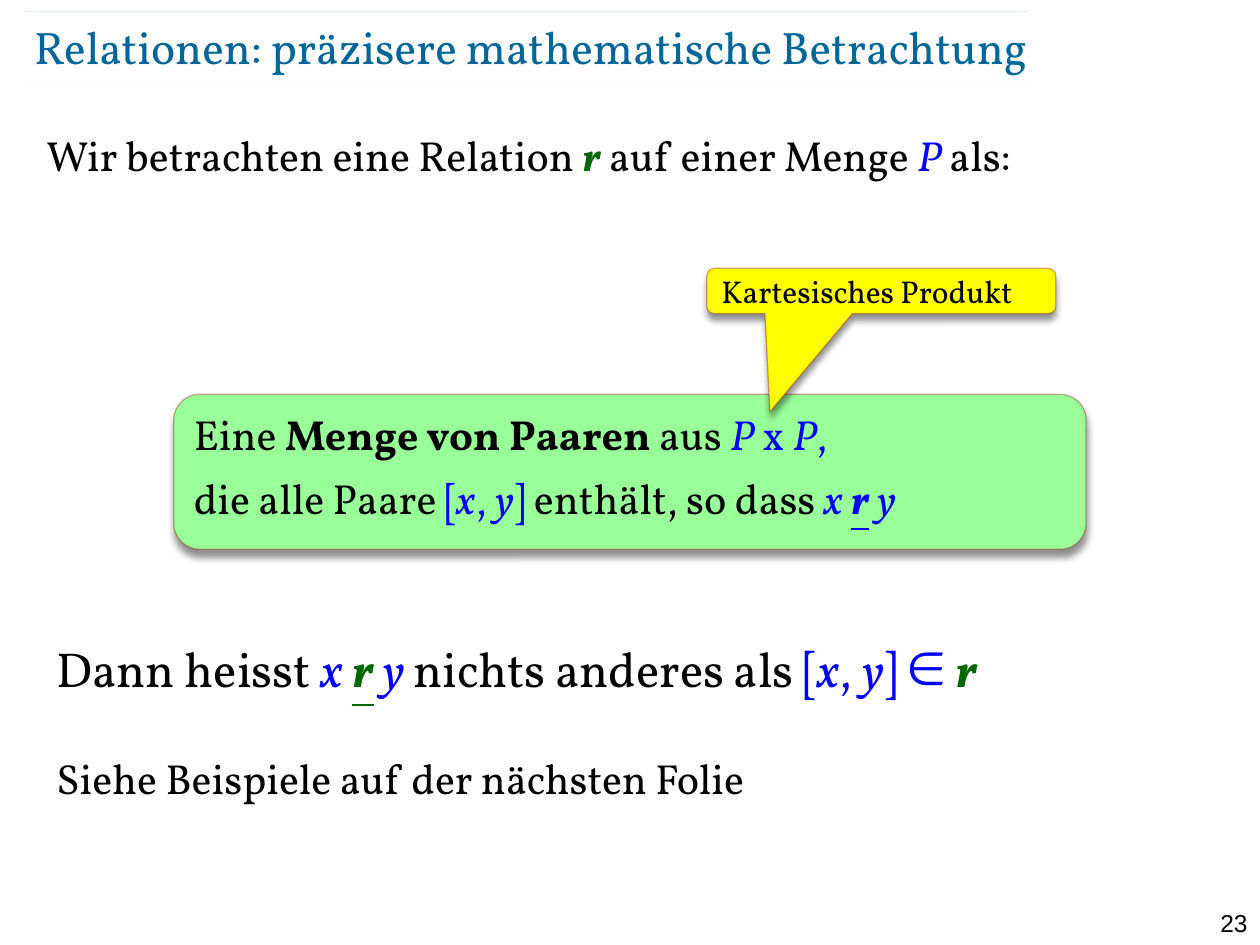
from lxml import etree
from pptx import Presentation
from pptx.dml.color import RGBColor
from pptx.enum import shapes, text
from pptx.oxml import parse_xml
from pptx.oxml.ns import qn
from pptx.util import Inches, Pt

HUE = {"title": "006699", "k": "000000", "g": "006600", "b": "0000FF",
       "box": "99FF99", "note": "FFFF00", "edge": "990000"}
FONT = "Vollkorn"
NS = "http://schemas.openxmlformats.org/drawingml/2006/main"

deck = Presentation()
deck.slide_width, deck.slide_height = Inches(10), Inches(7.5)
slide = deck.slides.add_slide(deck.slide_layouts[5])


def write(par, size, runs):
    """Each run is (words, style): a colour key, then B, I or U."""
    par.font.size, par.font.name = Pt(size), FONT
    par.alignment = text.PP_ALIGN.LEFT
    for words, style in runs:
        run = par.add_run()
        run.text = words
        run.font.color.rgb = RGBColor.from_string(HUE[style[0]])
        run.font.bold = "B" in style
        run.font.italic = "I" in style
        run.font.underline = "U" in style


def fade(line, share):
    """Make the colour of a line partly transparent."""
    color = line._ln.find(".//" + qn("a:srgbClr"))
    etree.SubElement(color, qn("a:alpha"), val=str(share * 1000))


# Rules above and below the title
for left, top in ((0.18, 0.67), (0.2, 0.09)):
    rule = slide.shapes.add_connector(
        shapes.MSO_CONNECTOR.STRAIGHT, Inches(left), Inches(top),
        Inches(left + 7.97), Inches(top))
    rule.line.color.rgb = RGBColor.from_string(HUE["title"])
    rule.line.width = Pt(0.1)
    fade(rule.line, 35)
    etree.SubElement(rule._element.spPr, qn("a:effectLst"))

# Title
title = slide.shapes.title
title.left, title.top = Inches(0.27), Inches(0.13)
title.width, title.height = Inches(8.69), Inches(0.48)
frame = title.text_frame
frame.auto_size = text.MSO_AUTO_SIZE.NONE
frame.vertical_anchor = text.MSO_ANCHOR.MIDDLE
frame.margin_left = frame.margin_right = 0
frame.margin_top = frame.margin_bottom = 0
write(frame.paragraphs[0], 26,
      [("Relationen: präzisere mathematische Betrachtung", ("title"),)][:0])
run = frame.paragraphs[0].add_run()
run.text = "Relationen: präzisere mathematische Betrachtung"
run.font.color.rgb = RGBColor.from_string(HUE["title"])

# Opening sentence
intro = slide.shapes.add_textbox(
    Inches(0.27), Inches(0.98), Inches(9.4), Inches(0.6)).text_frame
intro.word_wrap = True
write(intro.paragraphs[0], 24, [
    ("Wir betrachten eine Relation ", "k"), ("r", "gBI"),
    (" auf einer Menge ", "k"), ("P", "bI"), (" als:", "k")])

# Conclusion
end = slide.shapes.add_textbox(
    Inches(0.35), Inches(5.09), Inches(8.84), Inches(1.7)).text_frame
end.word_wrap = True
first = end.paragraphs[0]
first.line_spacing = 0.6
write(first, 28, [
    ("Dann heisst ", "k"), ("x ", "bI"), ("r", "gBIU"), (" y ", "bI"),
    ("nichts anderes als ", "k"), ("[", "b"), ("x", "bI"), (", ", "b"),
    ("y", "bI"), ("] ", "b"), ("∈", "b"), (" ", "b"), ("r", "gBI")])
first.runs[10].font.size = Pt(40)
last = end.add_paragraph()
last.space_before = Pt(31)
write(last, 24, [("Siehe Beispiele auf der nächsten Folie", "k")])

# Definition box and callout
frames = []
for kind, fill, left, top, width, height in (
        (shapes.MSO_SHAPE.ROUNDED_RECTANGLE, "box", 1.38, 3.13, 7.24, 1.23),
        (shapes.MSO_SHAPE.ROUNDED_RECTANGULAR_CALLOUT, "note",
         5.61, 2.13, 2.77, 0.36)):
    shape = slide.shapes.add_shape(
        kind, Inches(left), Inches(top), Inches(width), Inches(height))
    shape.fill.solid()
    shape.fill.fore_color.rgb = RGBColor.from_string(HUE[fill])
    shape.line.color.rgb = RGBColor.from_string(HUE["edge"])
    shape.line.width = Pt(0.75)
    fade(shape.line, 34)
    shape.shadow.inherit = False
    shape._element.spPr.find(qn("a:effectLst")).append(parse_xml(
        f'<a:outerShdw xmlns:a="{NS}" blurRad="{Pt(4)}" dist="{Pt(4)}" '
        'dir="5400000" rotWithShape="0"><a:srgbClr val="000000">'
        '<a:alpha val="43000"/></a:srgbClr></a:outerShdw>'))
    shape.text_frame.word_wrap = True
    shape.text_frame.vertical_anchor = text.MSO_ANCHOR.TOP
    frames.append(shape.text_frame)
for i, value in enumerate((-0.319, 2.664, 0.167)):
    shape.adjustments[i] = value

box, note = frames
write(box.paragraphs[0], 24, [
    ("Eine ", "k"), ("Menge von Paaren ", "kB"), ("aus ", "k"),
    ("P", "bI"), (" x ", "b"), ("P", "bI"), (",", "b")])
second = box.add_paragraph()
second.space_before = Pt(8)
write(second, 24, [
    ("die alle Paare ", "k"), ("[", "b"), ("x", "bI"), (", ", "b"),
    ("y", "bI"), ("] ", "b"), ("enthält, so dass ", "k"), ("x ", "bI"),
    ("r", "bBIU"), (" y", "bI")])
note.paragraphs[0].line_spacing = 0.9
write(note.paragraphs[0], 18, [("Kartesisches Produkt", "k")])

# Page number
page = slide.shapes.add_textbox(
    Inches(9.45), Inches(7.16), Inches(0.55), Inches(0.24)).text_frame
write(page.paragraphs[0], 14, [("23", "k")])
page.paragraphs[0].font.name = "Arial"
page.paragraphs[0].alignment = text.PP_ALIGN.RIGHT

deck.save("out.pptx")
